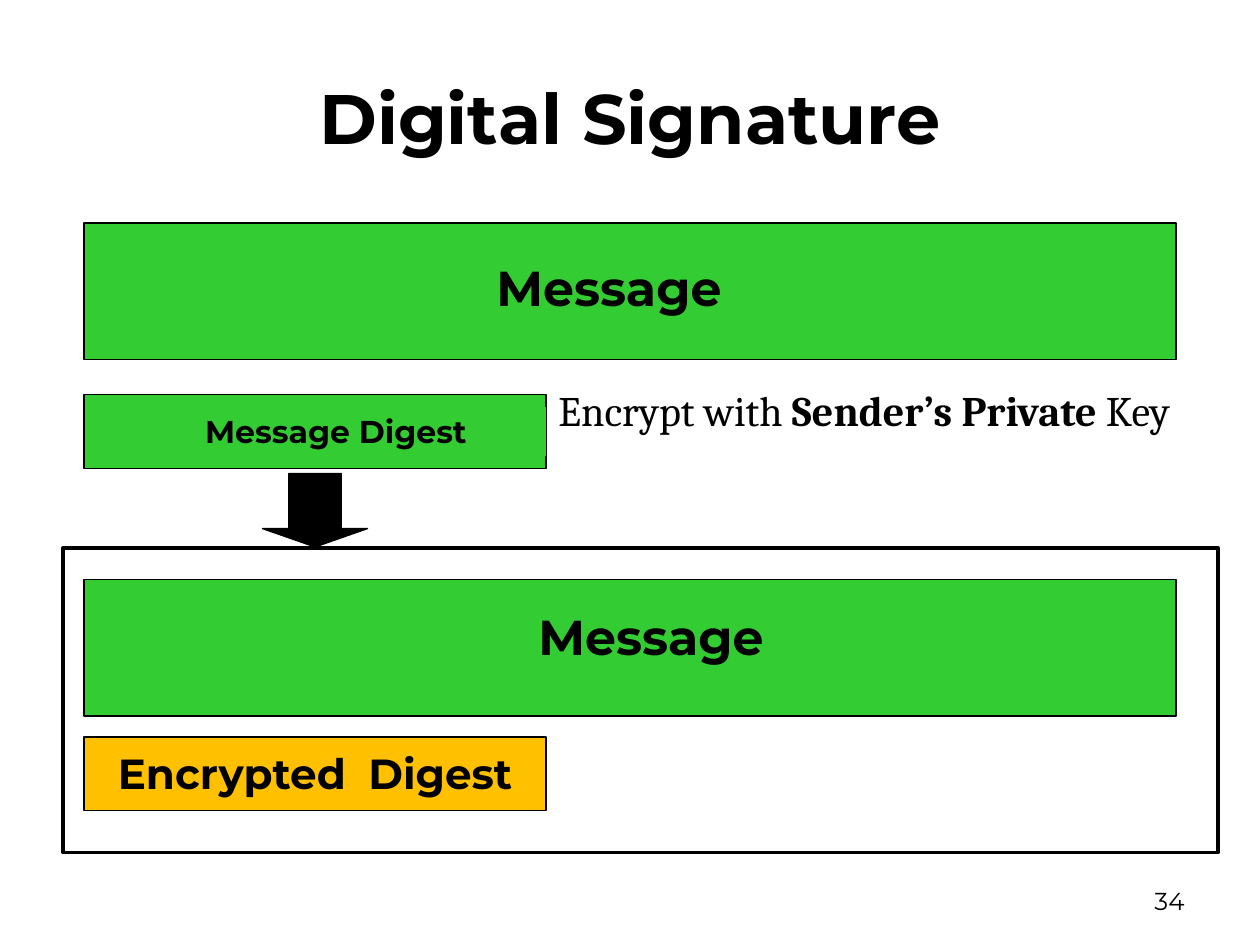
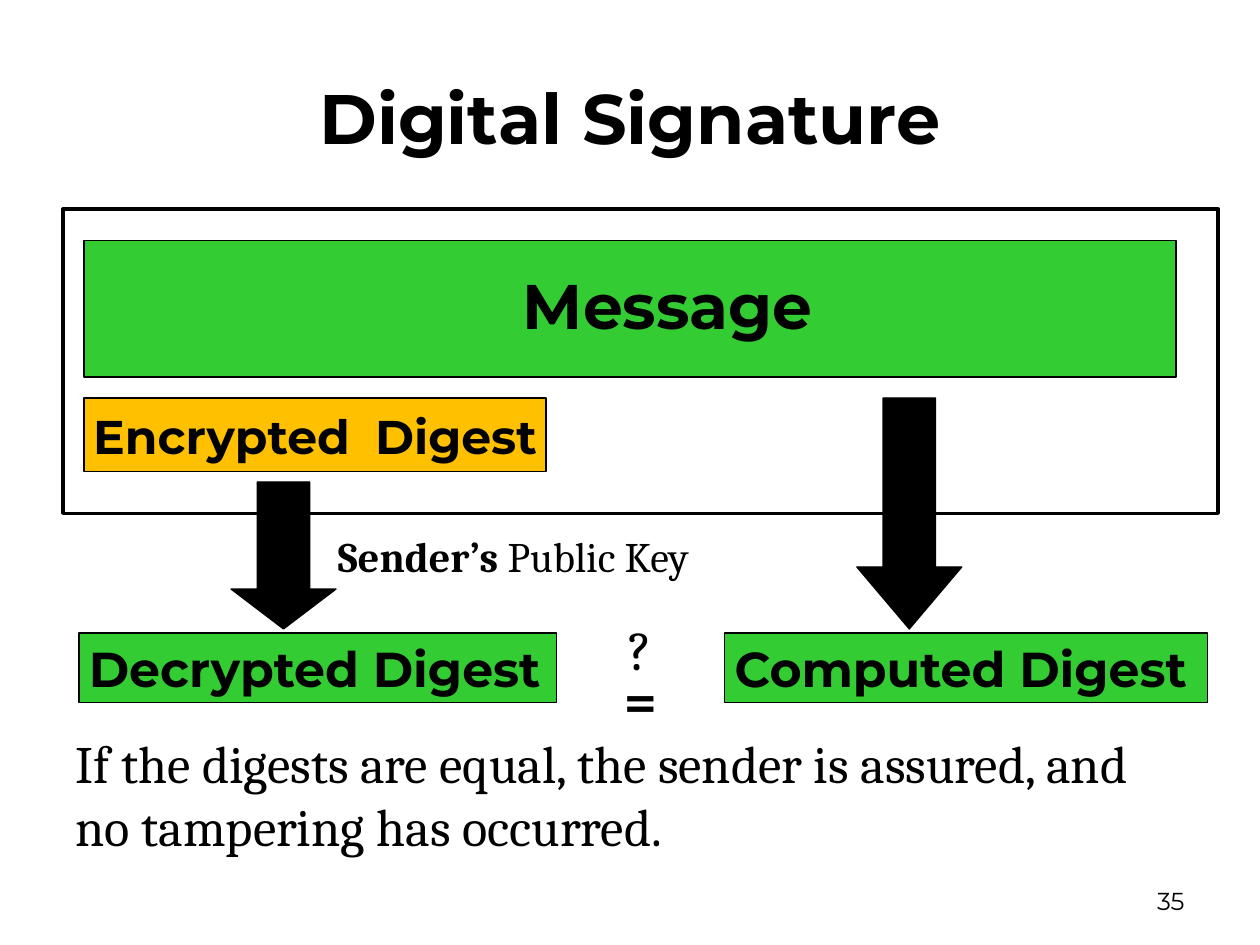
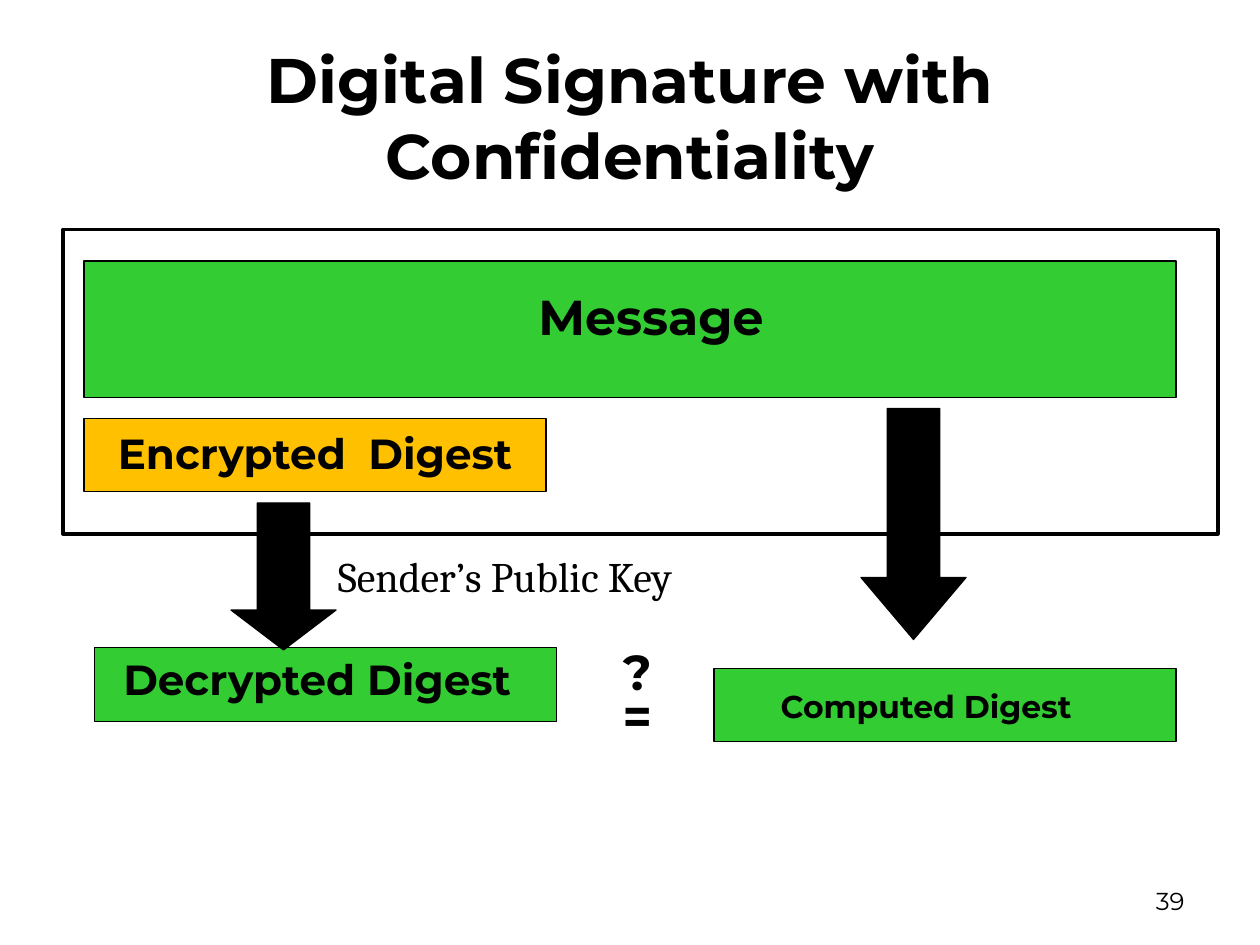
from dataclasses import dataclass
from typing import NamedTuple, Optional

from pptx import Presentation
from pptx.dml.color import RGBColor
from pptx.enum.shapes import MSO_SHAPE as Preset
from pptx.enum.text import MSO_ANCHOR as Anchor, MSO_AUTO_SIZE as Fit, PP_ALIGN as Align
from pptx.util import Inches, Pt

COLORS = {"ink": "000000", "message": "33CC33", "sealed": "FFC000"}
HEADING, BODY = "Montserrat", "Cambria"
TITLE_ONLY = 5
COLUMNS, ROWS = 120, 90
SLIDE_WIDTH, SLIDE_HEIGHT = Inches(10), Inches(7.5)
WIDE_INSET, SLIM_INSET = (0.1, 0.05), (0.08, 0.04)


class Area(NamedTuple):
    """A place on the slide in grid columns and rows."""
    col: float
    row: float
    cols: float
    rows: float

    def lengths(self) -> tuple[int, int, int, int]:
        column, row = SLIDE_WIDTH / COLUMNS, SLIDE_HEIGHT / ROWS
        return (round(self.col * column), round(self.row * row),
                round(self.cols * column), round(self.rows * row))


@dataclass(frozen=True)
class Span:
    text: str
    size: float
    face: str = HEADING
    bold: bool = True
    tracking: float = 0


@dataclass(frozen=True)
class Label:
    spans: tuple[Span, ...]
    align: Align = Align.CENTER
    inset: tuple[float, float] = WIDE_INSET
    anchor: Anchor = Anchor.TOP
    fit: Fit = Fit.SHAPE_TO_FIT_TEXT
    line_spacing: Optional[float] = None


@dataclass(frozen=True)
class Panel:
    area: Area
    fill: Optional[str] = None
    line: float = 0.75
    label: Optional[Label] = None
    preset: Preset = Preset.RECTANGLE
    head: Optional[float] = None


def heading(text: str, size: float, inset=WIDE_INSET, align=Align.CENTER) -> Label:
    return Label((Span(text, size),), align, inset)


def note(*spans: Span) -> Label:
    return Label(spans, Align.LEFT)


def plain(text: str, size: float = 24, bold: bool = False) -> Span:
    return Span(text, size, BODY, bold)


def encrypted_digest(size: float, inset=WIDE_INSET) -> Label:
    """Label whose word gap is widened by tracking."""
    return Label((Span("Encrypted", size), Span(" ", size, tracking=size / 4),
                  Span("Digest", size)), inset=inset)


def arrow(area: Area, head: float) -> Panel:
    return Panel(area, "ink", preset=Preset.DOWN_ARROW, head=head)


def write(frame, label: Label) -> None:
    across, down = (Inches(inset) for inset in label.inset)
    settings = {"word_wrap": True, "auto_size": label.fit,
                "vertical_anchor": label.anchor,
                "margin_left": across, "margin_right": across,
                "margin_top": down, "margin_bottom": down}
    for name, value in settings.items():
        setattr(frame, name, value)
    para = frame.paragraphs[0]
    para.alignment = label.align
    if label.line_spacing:
        para.line_spacing = label.line_spacing
    for span in label.spans:
        for index, text in enumerate(span.text.split("\n")):
            if index:
                para.add_line_break()
            if text:
                add_run(para, text, span)


def add_run(para, text: str, span: Span) -> None:
    run = para.add_run()
    run.text = text
    for name, value in {"name": span.face, "size": Pt(span.size), "bold": span.bold}.items():
        setattr(run.font, name, value)
    run.font.color.rgb = RGBColor.from_string(COLORS["ink"])
    if span.tracking:
        run.font._element.set("spc", str(round(span.tracking * 100)))


def add_panel(page, panel: Panel) -> None:
    shape = page.shapes.add_shape(panel.preset, *panel.area.lengths())
    shape.shadow.inherit = False
    if panel.head is not None:
        shape.adjustments[1] = panel.head
    if panel.fill:
        shape.fill.solid()
        shape.fill.fore_color.rgb = RGBColor.from_string(COLORS[panel.fill])
    else:
        shape.fill.background()
    if panel.line:
        shape.line.color.rgb = RGBColor.from_string(COLORS["ink"])
        shape.line.width = Pt(panel.line)
    else:
        shape.line.fill.background()
    if panel.label:
        write(shape.text_frame, panel.label)


def add_label(page, area: Area, label: Label) -> None:
    write(page.shapes.add_textbox(*area.lengths()).text_frame, label)


def add_page(deck, title: str, number: int, size: float = 40):
    page = deck.slides.add_slide(deck.slide_layouts[TITLE_ONLY])
    holder = page.shapes.title
    holder.left, holder.top, holder.width, holder.height = Area(6, 3.6, 108, 15).lengths()
    write(holder.text_frame, Label((Span(title, size),), anchor=Anchor.MIDDLE, fit=Fit.NONE))
    add_label(page, Area(86, 83.4, 28, 4.8),
              Label((Span(str(number), 14, bold=False),), Align.RIGHT,
                    anchor=Anchor.MIDDLE, fit=Fit.NONE))
    return page


def add_message(page, row: float, label_area: Area, label: Label) -> None:
    add_panel(page, Panel(Area(8, row, 104, 13), "message"))
    add_label(page, label_area, label)


def add_envelope(page, row: float, message_col: float, message_size: float,
                 digest_size: float, inset=SLIM_INSET) -> None:
    """Outlined frame holding the message and its encrypted digest."""
    add_message(page, row + 3, Area(message_col, row + 5, 56, 6.8),
                heading("Message", message_size, inset))
    add_panel(page, Panel(Area(8, row + 18, 44, 7), "sealed"))
    add_label(page, Area(7.8, row + 18.4, 44.4, 6),
              encrypted_digest(digest_size, inset))
    add_panel(page, Panel(Area(6, row, 110, 29), line=2))


def build_signing(deck) -> None:
    page = add_page(deck, "Digital Signature", 34)
    add_message(page, 21.25, Area(30, 23.9, 56, 6.8), heading("Message", 28))
    add_panel(page, Panel(Area(8, 37.6, 44, 7), "message"))
    add_panel(page, Panel(Area(12, 38.75, 40, 4.7), "message", line=0,
                          label=heading("Message Digest", 18, SLIM_INSET)))
    add_envelope(page, 52.2, 34, 28, 24, WIDE_INSET)
    add_label(page, Area(52, 36, 63, 6),
              note(plain("Encrypt with "), plain("Sender’s Private", bold=True),
                   plain(" Key")))
    add_panel(page, arrow(Area(25, 45.1, 10, 7), 0.25))


def add_checks(page, message_arrow: tuple[float, float], digest_row: float) -> None:
    """Arrows from the message and the encrypted digest to the compared digests."""
    add_panel(page, arrow(Area(*message_arrow, 10, 22), 0.59))
    add_panel(page, arrow(Area(22, digest_row, 10, 14), 0.38))


def add_comparison(page, area: Area, *spans: Span) -> None:
    add_label(page, area, Label(spans, line_spacing=0.75))


def build_verifying(deck) -> None:
    page = add_page(deck, "Digital Signature", 35)
    add_envelope(page, 19.9, 35.6, 36, 27)
    for text, col, cols in (("Computed Digest", 69, 46), ("Decrypted Digest", 7.5, 45.5)):
        add_panel(page, Panel(Area(col, 60.3, cols, 6.6), "message", 1,
                              heading(text, 28, SLIM_INSET, Align.LEFT)))
    add_comparison(page, Area(55, 59.4, 12, 11.3),
                   plain("?\n", 32), plain("=", 32, bold=True))
    add_checks(page, (81.6, 37.9), 45.9)
    add_label(page, Area(31, 49.9, 41, 6),
              note(plain("Sender’s", bold=True), plain(" Public Key")))
    add_label(page, Area(6, 69, 108, 13.3),
              note(plain("If the digests are equal, the sender is assured, "
                         "and no tampering has occurred.", 30)))


def build_confidential(deck) -> None:
    page = add_page(deck, "Digital Signature with Confidentiality", 39, 36)
    add_envelope(page, 21.85, 34, 28, 24)
    add_panel(page, Panel(Area(68, 63.65, 44, 7), "message"))
    add_label(page, Area(68.2, 64.95, 40, 4.7), heading("Computed Digest", 18, SLIM_INSET))
    add_panel(page, Panel(Area(9, 61.7, 44, 7), "message"))
    add_label(page, Area(10.2, 61.8, 40, 5.9), heading("Decrypted Digest", 24, SLIM_INSET))
    add_comparison(page, Area(54.7, 61.8, 12, 9.8), Span("?\n=", 28))
    add_checks(page, (82, 38.9), 47.9)
    add_label(page, Area(31, 51.85, 41, 6), note(plain("Sender’s Public Key")))


def main() -> None:
    deck = Presentation()
    deck.slide_width, deck.slide_height = SLIDE_WIDTH, SLIDE_HEIGHT
    for build in (build_signing, build_verifying, build_confidential):
        build(deck)
    deck.save("out.pptx")


if __name__ == "__main__":
    main()
